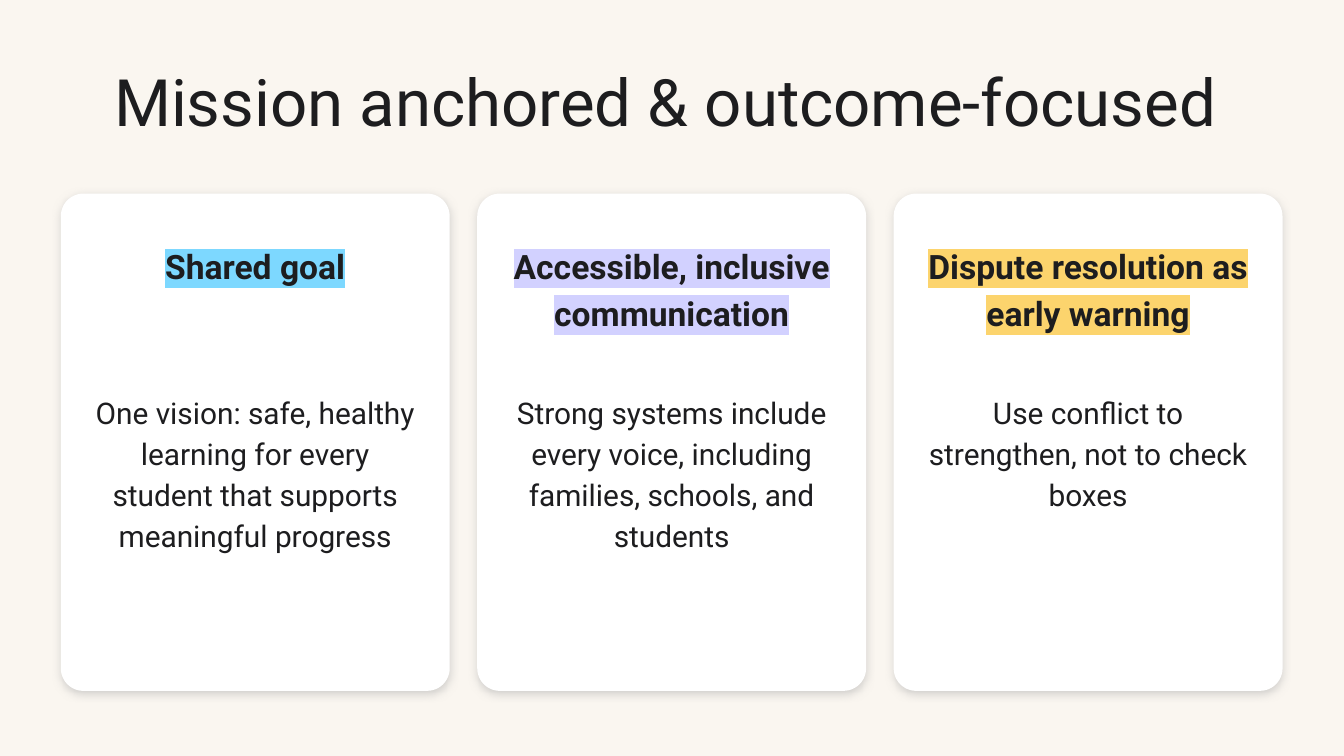
"""Build a slide with a title above three cards, each with a highlighted heading."""
from lxml import etree
from pptx import Presentation
from pptx import util as u
from pptx.dml.color import RGBColor
from pptx.enum import shapes, text
from pptx.oxml.ns import qn

COLORS = {
    "background": "FAF6F0",
    "card": "FFFFFF",
    "ink": "1D1D1F",
    "shadow": "ADADAD",
    "blue": "7DD8FF",
    "lilac": "D2D1FF",
    "yellow": "FCD46D",
}
TITLE_FRAME = {
    "margin_left": 0, "margin_top": 0, "margin_right": 0, "margin_bottom": 0,
    "vertical_anchor": text.MSO_ANCHOR.TOP, "word_wrap": True,
    "auto_size": text.MSO_AUTO_SIZE.NONE,
}
CARD_FRAME = TITLE_FRAME | {
    "margin_left": u.Cm(0.51), "margin_top": u.Cm(0.76),
    "margin_right": u.Cm(0.51), "margin_bottom": u.Cm(0.25),
}
TITLE_BOX = {"left": u.Cm(0.76), "top": u.Cm(1.27), "width": u.Cm(23.65), "height": u.Cm(1.93)}
CARDS = [
    ("Shared goal", "blue", 55,
     "One vision: safe, healthy learning for every student that supports meaningful progress"),
    ("Accessible, inclusive communication", "lilac", 30,
     "Strong systems include every voice, including families, schools, and students"),
    ("Dispute resolution as early warning", "yellow", 30,
     "Use conflict to strengthen, not to check boxes"),
]


def apply_format(target, values):
    """Set every attribute in values on target."""
    for name, value in values.items():
        setattr(target, name, value)


def write_paragraph(paragraph, words, size, spacing, bold=False, gap=0, highlight=None):
    """Write one centred run, with an optional highlight behind it."""
    apply_format(paragraph, {
        "alignment": text.PP_ALIGN.CENTER, "line_spacing": spacing, "space_before": u.Pt(gap),
    })
    run = paragraph.add_run()
    run.text = words
    run.font.color.rgb = RGBColor.from_string(COLORS["ink"])
    if highlight:
        marker = etree.SubElement(run.font._element, qn("a:highlight"))
        etree.SubElement(marker, qn("a:srgbClr"), val=COLORS[highlight])
    apply_format(run.font, {"name": "Roboto", "size": u.Pt(size), "bold": bold})


presentation = Presentation()
apply_format(presentation, {"slide_width": u.Cm(25.4), "slide_height": u.Cm(14.29)})
slide = presentation.slides.add_slide(presentation.slide_layouts[5])
slide.background.fill.solid()
slide.background.fill.fore_color.rgb = RGBColor.from_string(COLORS["background"])

title = slide.shapes.title
apply_format(title, TITLE_BOX)
apply_format(title.text_frame, TITLE_FRAME)
write_paragraph(title.text_frame.paragraphs[0], "Mission anchored & outcome-focused", 35, 0.95)

for index, (heading, highlight, gap, body) in enumerate(CARDS):
    card = slide.shapes.add_shape(
        shapes.MSO_SHAPE.ROUNDED_RECTANGLE,
        u.Cm(1.15 + 7.87 * index), u.Cm(3.66), u.Cm(7.35), u.Cm(9.4),
    )
    card.adjustments[0] = 0.058
    card.fill.solid()
    card.fill.fore_color.rgb = RGBColor.from_string(COLORS["card"])
    card.line.fill.background()
    card.shadow.inherit = False
    effects = card._element.spPr.find(qn("a:effectLst"))
    shadow = etree.SubElement(
        effects, qn("a:outerShdw"), blurRad=str(u.Pt(4.5)), dist=str(u.Pt(1.5)),
        dir="5400000", algn="bl", rotWithShape="0",
    )
    shadow_color = etree.SubElement(shadow, qn("a:srgbClr"), val=COLORS["shadow"])
    etree.SubElement(shadow_color, qn("a:alpha"), val="50000")

    frame = card.text_frame
    apply_format(frame, CARD_FRAME)
    write_paragraph(frame.paragraphs[0], heading, 18, 1.15, bold=True, highlight=highlight)
    write_paragraph(frame.add_paragraph(), body, 16, 1.15, gap=gap)

presentation.save("out.pptx")
